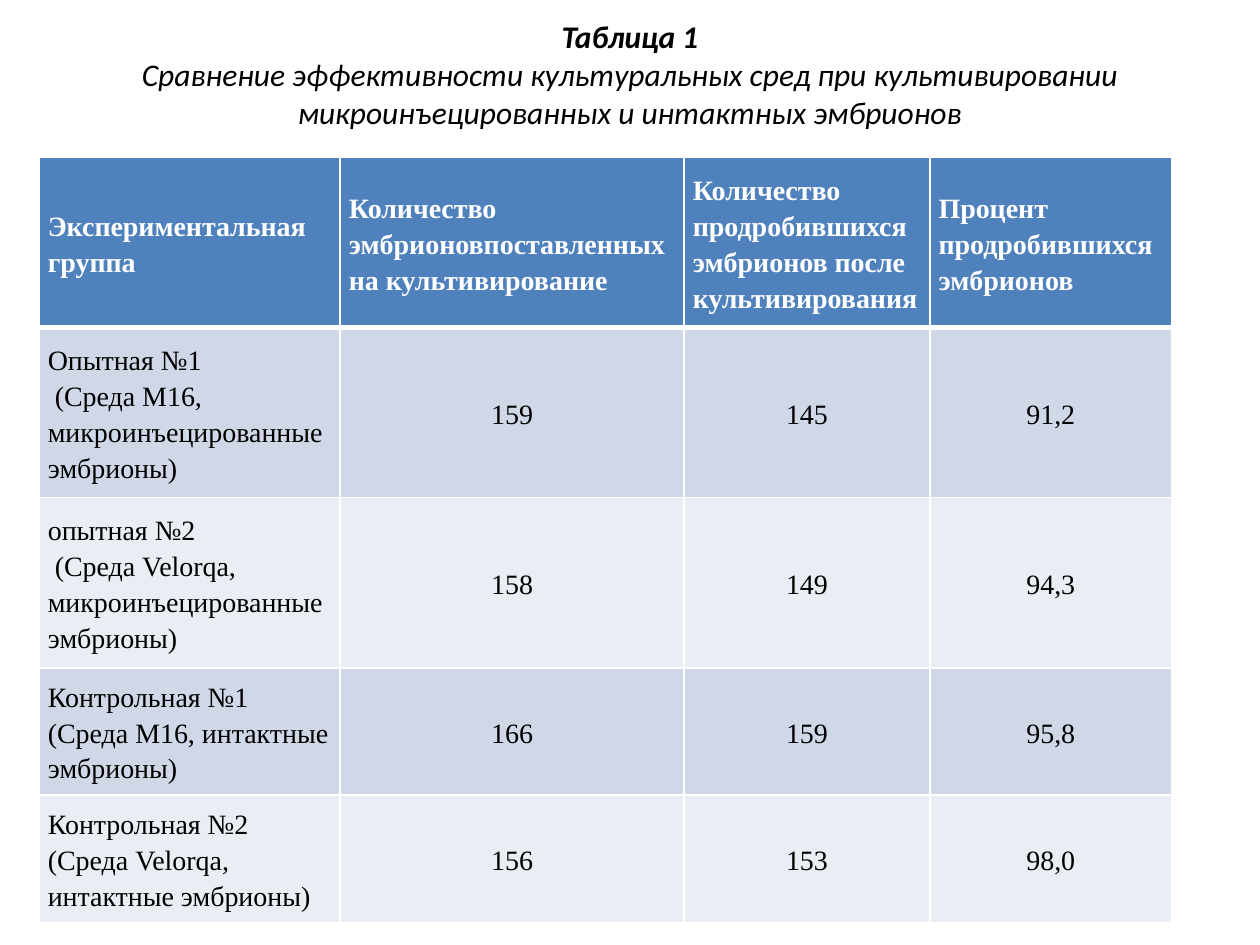
from lxml import etree
from pptx import Presentation
from pptx.dml.color import RGBColor
from pptx.enum.text import MSO_ANCHOR, PP_ALIGN
from pptx.oxml.ns import qn
from pptx.util import Inches, Pt

CENTER, LEFT = PP_ALIGN.CENTER, PP_ALIGN.LEFT
MIDDLE = MSO_ANCHOR.MIDDLE

WIDTH, HEIGHT = 10, 7.5
COLUMNS = [2.39, 2.73, 1.95, 1.92]
ROWS = [1.35, 1.35, 1.35, 1.01, 1.01]
WHITE, BLACK, HEADER = "FFFFFF", "000000", "4F81BD"
BANDS = ["D0D8E8", "E9EDF4"]

TITLE = ["Таблица 1",
         "Сравнение эффективности культуральных сред при культивировании "
         "микроинъецированных и интактных эмбрионов"]
DATA = [
    ["Экспериментальная группа",
     "Количество эмбрионовпоставленных на культивирование",
     "Количество продробившихся эмбрионов после культивирования",
     "Процент продробившихся эмбрионов"],
    ["Опытная №1\n (Среда М16, микроинъецированные эмбрионы)", "159", "145", "91,2"],
    ["опытная №2\n (Среда Velorqa, микроинъецированные эмбрионы)", "158", "149", "94,3"],
    ["Контрольная №1 (Среда М16, интактные эмбрионы)", "166", "159", "95,8"],
    ["Контрольная №2 (Среда Velorqa, интактные эмбрионы)", "156", "153", "98,0"],
]


def rgb(color):
    return RGBColor.from_string(color)


def style_run(r, font, size, color, bold=False, italic=False):
    r.font.name, r.font.size = font, Pt(size)
    r.font.bold, r.font.italic = bold, italic
    r.font.color.rgb = rgb(color)


def add_title(slide):
    sp = slide.shapes.add_textbox(Inches(0.05 * WIDTH), 0,
                                  Inches(0.9 * WIDTH), Inches(1.17))
    tf = sp.text_frame
    tf.word_wrap, tf.vertical_anchor = True, MIDDLE
    p = tf.paragraphs[0]
    p.text = "\v".join(TITLE)
    p.alignment = CENTER
    for i, r in enumerate(p.runs):
        style_run(r, "Calibri", 18, BLACK, bold=i == 0, italic=True)


def set_borders(cell, widths):
    """Draw white lines; widths maps each side (L, R, T, B) to points."""
    tc_pr = cell._tc.get_or_add_tcPr()
    for side, width in widths.items():
        ln = etree.SubElement(tc_pr, qn("a:ln" + side), w=str(Pt(width)))
        fill = etree.SubElement(ln, qn("a:solidFill"))
        etree.SubElement(fill, qn("a:srgbClr"), val=WHITE)


def fill_cell(cell, text, row, col):
    is_header = row == 0
    set_borders(cell, {"L": 1, "R": 1, "T": 3 if row == 1 else 1,
                       "B": 3 if is_header else 1})
    cell.fill.solid()
    cell.fill.fore_color.rgb = rgb(HEADER if is_header else BANDS[(row - 1) % 2])
    cell.margin_left = cell.margin_right = Inches(0.07)
    cell.margin_top = cell.margin_bottom = 0
    cell.vertical_anchor = MIDDLE
    cell.text_frame.text = text
    for p in cell.text_frame.paragraphs:
        p.line_spacing = 1.15
        p.alignment = LEFT if is_header or col == 0 else CENTER
        for r in p.runs:
            style_run(r, "Times New Roman", 16,
                      WHITE if is_header else BLACK, bold=is_header)


def add_data_table(slide):
    table = slide.shapes.add_table(
        len(ROWS), len(COLUMNS), Inches(0.31), Inches(1.25),
        Inches(sum(COLUMNS)), Inches(sum(ROWS))).table
    for column, width in zip(table.columns, COLUMNS):
        column.width = Inches(width)
    for row, height in zip(table.rows, ROWS):
        row.height = Inches(height)
    for i, texts in enumerate(DATA):
        for j, text in enumerate(texts):
            fill_cell(table.cell(i, j), text, i, j)


def main():
    prs = Presentation()
    prs.slide_width, prs.slide_height = Inches(WIDTH), Inches(HEIGHT)
    slide = prs.slides.add_slide(prs.slide_layouts[6])
    # Table number and caption
    add_title(slide)
    # Comparison of culture media
    add_data_table(slide)
    prs.save("out.pptx")


if __name__ == "__main__":
    main()
